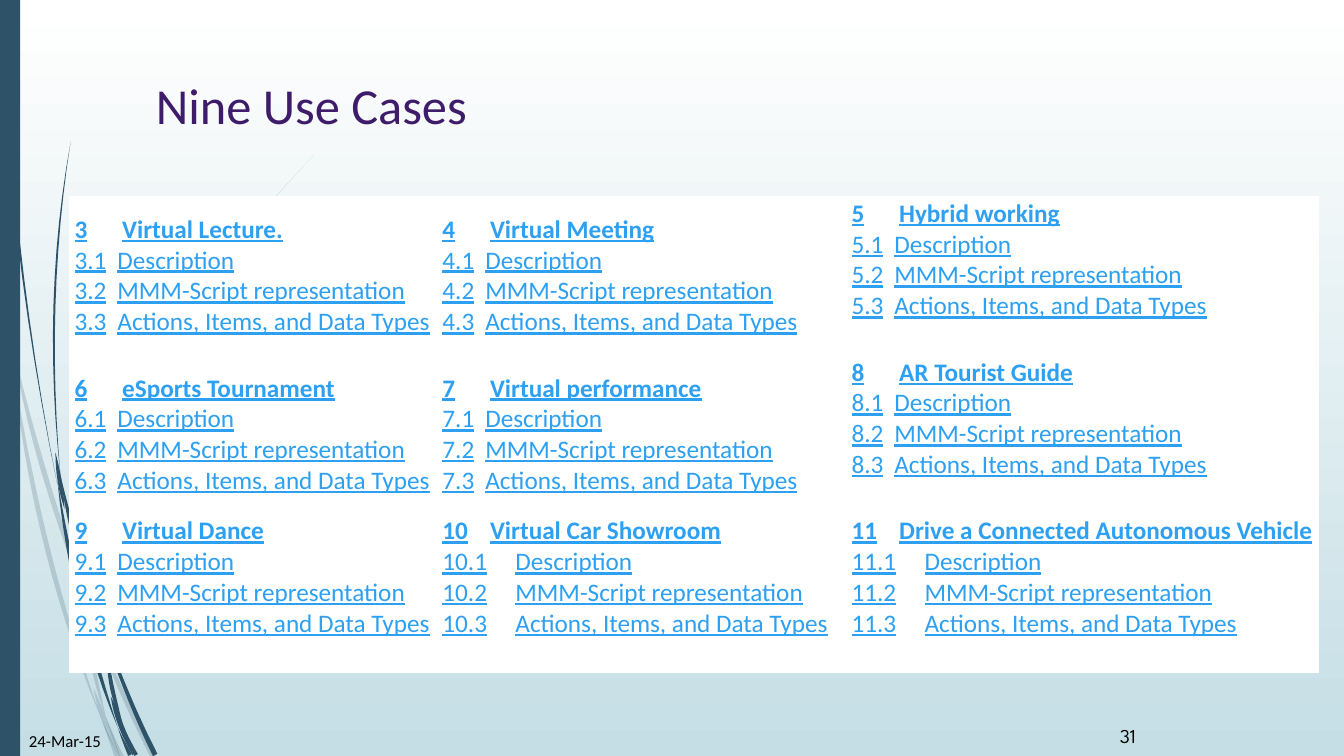
import math

import pptx
import pptx.enum.shapes
import pptx.enum.text
import pptx.oxml
import pptx.oxml.ns
import pptx.util
from pptx.dml.color import RGBColor
from pptx.util import Cm

WHITE = RGBColor(0xFF, 0xFF, 0xFF)
MIST = RGBColor(0xC5, 0xDE, 0xE5)
NAVY = RGBColor(0x2E, 0x53, 0x69)
PURPLE = RGBColor(0x3F, 0x1C, 0x6A)
BLACK = RGBColor(0, 0, 0)
LINK_BLUE = RGBColor(0x2D, 0xA0, 0xF1)

TOP = pptx.enum.text.MSO_ANCHOR.TOP
MIDDLE = pptx.enum.text.MSO_ANCHOR.MIDDLE

GRASS_UNIT = Cm(0.0254)
GRASS_DETAIL = 10
BLADE_STEPS = 12

BLADE_WIDTHS = {
    "tall blade": (3, 2, 0),
    "upright blade": (0, 2, 0),
    "arching blade": (4, 2, 0),
    "upper joint": (0, 4, 0),
    "lower joint": (0, 4, 0),
    "outer stem": (0, 5, 2),
    "inner stem": (0, 5, 0),
    "bud": (0, 4, 0),
    "outer foot": (3, 4, 5),
    "middle foot": (0, 5, 1),
    "inner foot": (0, 2, 4),
    "sliver": (0, 2, 4),
}
PALE_CLUMP = {
    "tall blade": [(0, 290), (6, 318), (11, 350)],
    "arching blade": [(87, 590), (92, 385), (312, 153)],
    "lower joint": [(85, 586), (86, 598), (88, 610)],
    "outer stem": [(14, 348), (32, 446), (85, 593)],
    "inner stem": [(11, 350), (36, 548), (101, 714)],
    "bud": [(84, 599), (88, 655), (105, 711)],
    "outer foot": [(88, 603), (114, 678), (152, 751)],
    "middle foot": [(93, 683), (102, 714), (119, 751)],
    "inner foot": [(105, 711), (112, 731), (121, 751)],
    "sliver": [(101, 714), (108, 732), (116, 751)],
}
DARK_CLUMP = {
    "tall blade": [(4, 0), (6, 230), (57, 481)],
    "upright blade": [(70, 141), (43, 300), (60, 472)],
    "arching blade": [(108, 636), (112, 490), (260, 344)],
    "upper joint": [(55, 449), (59, 478), (64, 505)],
    "lower joint": [(106, 631), (108, 643), (111, 656)],
    "outer stem": [(60, 472), (73, 542), (106, 640)],
    "inner stem": [(57, 477), (75, 608), (117, 722)],
    "bud": [(106, 645), (109, 685), (122, 719)],
    "outer foot": [(111, 648), (131, 703), (154, 749)],
    "middle foot": [(110, 691), (118, 717), (132, 749)],
    "inner foot": [(122, 719), (128, 735), (135, 749)],
    "sliver": [(117, 722), (122, 735), (129, 749)],
}

USE_CASES = [
    "Virtual Lecture.", "Virtual Meeting", "Hybrid working",
    "eSports Tournament", "Virtual performance", "AR Tourist Guide",
    "Virtual Dance", "Virtual Car Showroom", "Drive a Connected Autonomous Vehicle",
]
SECTIONS = ["Description", "MMM-Script representation", "Actions, Items, and Data Types"]
FIRST_CHAPTER = 3
COLUMN_WIDTHS = [Cm(9.27), Cm(10.31), Cm(11.89)]
ROW_HEIGHT = Cm(4)


def bend(start, control, end, t):
    """Return the value at t on a quadratic Bezier curve."""
    return (1 - t) ** 2 * start + 2 * t * (1 - t) * control + t ** 2 * end


def blade_outline(spine, widths):
    """Return the outline of a blade that swells and tapers along a bent spine."""
    (x0, y0), (x1, y1), (x2, y2) = spine
    first, middle, last = widths
    swell = 2 * middle - (first + last) / 2
    left_edge, right_edge = [], []
    for step in range(BLADE_STEPS + 1):
        t = step / BLADE_STEPS
        x, y = bend(x0, x1, x2, t), bend(y0, y1, y2, t)
        run = (1 - t) * (x1 - x0) + t * (x2 - x1)
        rise = (1 - t) * (y1 - y0) + t * (y2 - y1)
        reach = max(bend(first, swell, last, t), 0) / 2 / math.hypot(run, rise)
        for edge, side in ((left_edge, -1), (right_edge, 1)):
            edge.append((round((x - side * rise * reach) * GRASS_DETAIL),
                         round((y + side * run * reach) * GRASS_DETAIL)))
    return left_edge + right_edge[::-1]


class SlideBuilder:
    """Draw the elements of one slide in a shared style."""

    def __init__(self, slide, font_name="Calibri"):
        self.slide = slide
        self.font_name = font_name

    def background(self, top_color, bottom_color):
        fill = self.slide.background.fill
        fill.gradient()
        fill.gradient_angle = 270
        for stop, color in zip(fill.gradient_stops, (top_color, bottom_color)):
            stop.color.rgb = color

    def paint(self, shape, color, opacity=100):
        shape.shadow.inherit = False
        shape.fill.solid()
        shape.fill.fore_color.rgb = color
        shape.line.fill.background()
        if opacity < 100:
            color_element = shape.fill._xPr.find(".//" + pptx.oxml.ns.qn("a:srgbClr"))
            color_element.append(pptx.oxml.parse_xml(
                f'<a:alpha {pptx.oxml.ns.nsdecls("a")} val="{opacity * 1000}"/>'))

    def grass(self, clump, color, opacity=100):
        blades = []
        for part, spine in clump.items():
            start, *points = blade_outline(spine, BLADE_WIDTHS[part])
            builder = self.slide.shapes.build_freeform(*start, scale=GRASS_UNIT / GRASS_DETAIL)
            builder.add_line_segments(points, close=True)
            blade = builder.convert_to_shape()
            self.paint(blade, color, opacity)
            blades.append(blade)
        self.slide.shapes.add_group_shape(blades)

    def bar(self, left, top, width, height, color):
        shape = self.slide.shapes.add_shape(
            pptx.enum.shapes.MSO_SHAPE.RECTANGLE, left, top, width, height)
        self.paint(shape, color)

    def style(self, paragraph, size, color, name=None, bold=False, underline=False):
        font = paragraph.font
        font.name = name or self.font_name
        font.size = pptx.util.Pt(size)
        font.color.rgb = color
        font.bold = bold
        font.underline = underline

    def text(self, content, left, top, width, height, size, color, name=None, inset=Cm(0.13)):
        frame = self.slide.shapes.add_textbox(left, top, width, height).text_frame
        frame.word_wrap = True
        frame.margin_top = frame.margin_bottom = inset
        paragraph = frame.paragraphs[0]
        paragraph.text = content
        self.style(paragraph, size, color, name)

    def tab_stop(self, paragraph, position):
        paragraph._p.get_or_add_pPr().append(pptx.oxml.parse_xml(
            f'<a:tabLst {pptx.oxml.ns.nsdecls("a")}>'
            f'<a:tab pos="{position}" algn="l"/></a:tabLst>'))

    def use_case(self, cell, chapter, title):
        cell.fill.solid()
        cell.fill.fore_color.rgb = WHITE
        cell.margin_left = cell.margin_right = Cm(0.13)
        cell.margin_top = cell.margin_bottom = Cm(0.05)
        frame = cell.text_frame
        section_tab = Cm(1.08) if chapter < 10 else Cm(1.84)
        lines = [(f"{chapter}\t{title}", Cm(1.2), True)]
        lines += [(f"{chapter}.{number}\t{section}", section_tab, False)
                  for number, section in enumerate(SECTIONS, 1)]
        for index, (content, tab, bold) in enumerate(lines):
            paragraph = frame.add_paragraph() if index else frame.paragraphs[0]
            paragraph.text = content
            self.tab_stop(paragraph, tab)
            self.style(paragraph, 18, LINK_BLUE, bold=bold, underline=True)

    def use_case_table(self, left, top):
        columns = len(COLUMN_WIDTHS)
        rows = len(USE_CASES) // columns
        table = self.slide.shapes.add_table(
            rows, columns, left, top, sum(COLUMN_WIDTHS), ROW_HEIGHT * rows).table
        table.first_row = table.horz_banding = False
        for column, width in zip(table.columns, COLUMN_WIDTHS):
            column.width = width
        for index, title in enumerate(USE_CASES):
            row, column = divmod(index, columns)
            cell = table.cell(row, column)
            self.use_case(cell, FIRST_CHAPTER + index, title)
            cell.vertical_anchor = TOP if row == rows - 1 or column == columns - 1 else MIDDLE


presentation = pptx.Presentation()
presentation.slide_width, presentation.slide_height = Cm(33.87), Cm(19.05)
builder = SlideBuilder(presentation.slides.add_slide(presentation.slide_layouts[6]))
builder.background(WHITE, MIST)
builder.grass(PALE_CLUMP, NAVY, opacity=20)
builder.grass(DARK_CLUMP, NAVY)
builder.bar(0, 0, Cm(0.51), presentation.slide_height, NAVY)
builder.text("Nine Use Cases", Cm(3.68), Cm(1.73), Cm(28.3), Cm(3.56), 36, PURPLE)
builder.text("24-Mar-15", Cm(0.48), Cm(18.29), Cm(2.77), Cm(1.02), 12, BLACK)
builder.text("31", Cm(27.97), Cm(18.24), Cm(1.55), Cm(0.13), 14, BLACK, "League Spartan", 0)
builder.use_case_table(Cm(1.75), Cm(4.95))
presentation.save("out.pptx")
